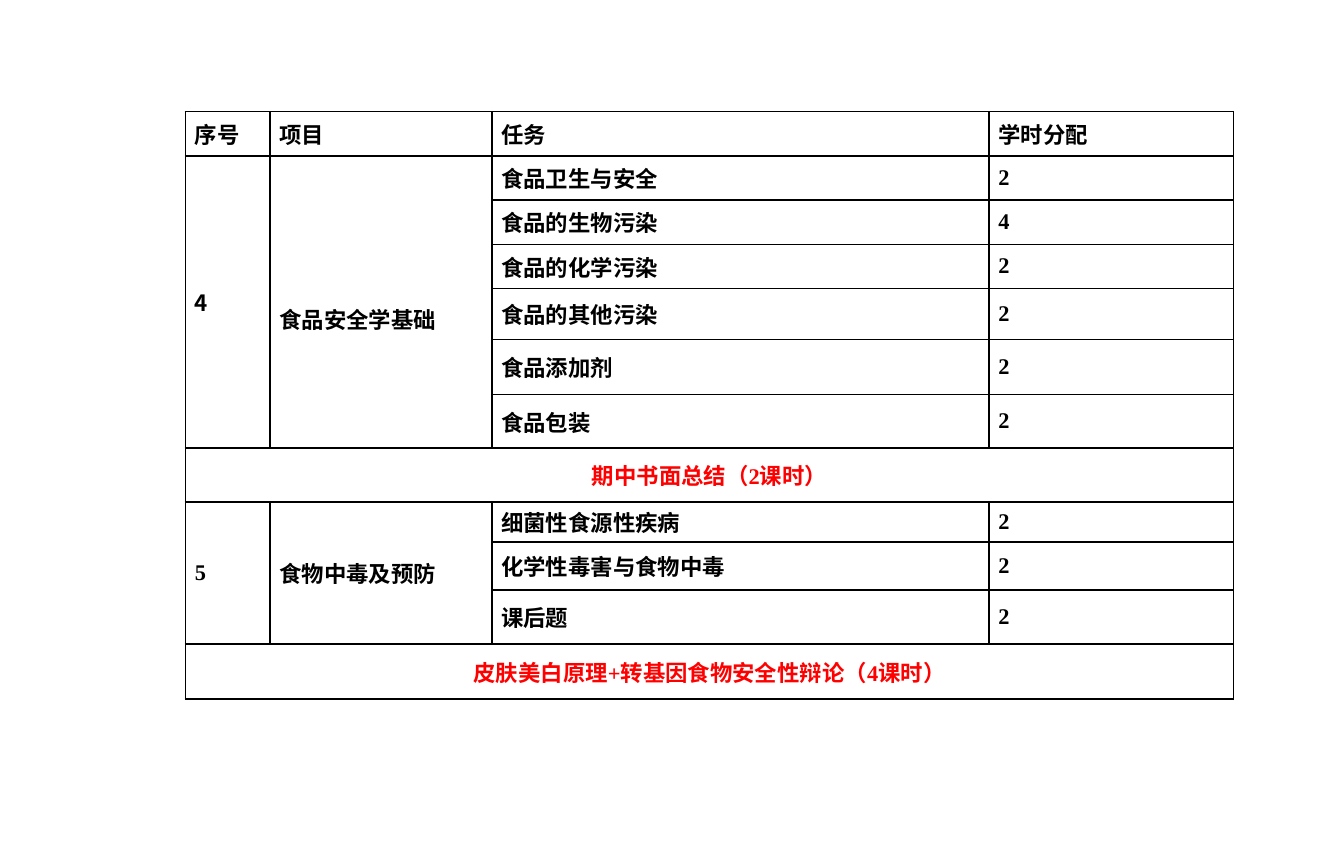
from lxml import etree
from pptx import Presentation
from pptx.dml.color import RGBColor
from pptx.enum.text import MSO_ANCHOR, PP_ALIGN
from pptx.oxml.ns import qn
from pptx.util import Inches, Pt

MIDDLE = MSO_ANCHOR.MIDDLE
CENTER, JUSTIFY = PP_ALIGN.CENTER, PP_ALIGN.JUSTIFY

BLACK, RED = "000000", "FF0000"
LATIN, CJK = "Times New Roman", "Noto Sans CJK SC"
COL_WIDTHS = [0.63, 1.65, 3.7, 1.82]
ROW_HEIGHTS = [0.33] * 4 + [0.38, 0.41, 0.4, 0.4, 0.3, 0.36, 0.4, 0.41]
HEADERS = ["序号", "项目", "任务", "学时分配"]
# number, number font, project, extra top margin, tasks with hours, closing line
UNITS = [
    ("4", CJK, "食品安全学基础", 0.25,
     [("食品卫生与安全", 2), ("食品的生物污染", 4), ("食品的化学污染", 2),
      ("食品的其他污染", 2), ("食品添加剂", 2), ("食品包装", 2)],
     "期中书面总结（2课时）"),
    ("5", LATIN, "食物中毒及预防", 0,
     [("细菌性食源性疾病", 2), ("化学性毒害与食物中毒", 2), ("课后题", 2)],
     "皮肤美白原理+转基因食物安全性辩论（4课时）"),
]


def rgb(color):
    return RGBColor.from_string(color)


def format_cell(cell):
    """Give a cell its black borders, no fill and its margins."""
    tc_pr = cell._tc.get_or_add_tcPr()
    for side in ("lnL", "lnR", "lnT", "lnB"):
        ln = etree.SubElement(tc_pr, qn(f"a:{side}"), w=str(Pt(1)))
        fill = etree.SubElement(ln, qn("a:solidFill"))
        etree.SubElement(fill, qn("a:srgbClr"), val=BLACK)
    cell.fill.background()
    cell.margin_left = cell.margin_right = Inches(0.07)
    cell.margin_top = cell.margin_bottom = 0
    cell.vertical_anchor = MIDDLE


def write(cell, text, color=BLACK, font=LATIN, align=JUSTIFY):
    p = cell.text_frame.paragraphs[0]
    p.text = text
    p.alignment = align
    r = p.runs[0]
    r.font.size = Pt(12)
    r.font.bold = True
    r.font.name = font
    r.font.color.rgb = rgb(color)
    etree.SubElement(r.font._element, qn("a:ea"), typeface=CJK)


def add_unit(table, top, unit):
    """Fill the rows of one unit from row top; return the next free row."""
    number, number_font, project, offset, tasks, closing = unit
    end = top + len(tasks)
    for col in (0, 1):
        table.cell(top, col).merge(table.cell(end - 1, col))
    write(table.cell(top, 0), number, font=number_font)
    write(table.cell(top, 1), project)
    table.cell(top, 1).margin_top = Inches(offset)
    for row, (task, hours) in enumerate(tasks, top):
        write(table.cell(row, 2), task)
        write(table.cell(row, 3), str(hours))
    table.cell(end, 0).merge(table.cell(end, len(HEADERS) - 1))
    write(table.cell(end, 0), closing, RED, align=CENTER)
    return end + 1


def add_schedule(slide, left, top, width, height):
    table = slide.shapes.add_table(
        len(ROW_HEIGHTS), len(COL_WIDTHS),
        Inches(left), Inches(top), Inches(width), Inches(height)).table
    table.first_row = table.horz_banding = False
    for column, share in zip(table.columns, COL_WIDTHS):
        column.width = Inches(width * share / sum(COL_WIDTHS))
    for row, share in zip(table.rows, ROW_HEIGHTS):
        row.height = Inches(height * share / sum(ROW_HEIGHTS))
    for cell in table.iter_cells():
        format_cell(cell)
    for col, header in enumerate(HEADERS):
        write(table.cell(0, col), header)
    row = 1
    for unit in UNITS:
        row = add_unit(table, row, unit)


def main():
    prs = Presentation()
    prs.slide_width, prs.slide_height = Inches(10), Inches(6.3)
    slide = prs.slides.add_slide(prs.slide_layouts[6])
    add_schedule(slide, 1.38, 0.83, 7.8, 4.37)
    prs.save("out.pptx")


if __name__ == "__main__":
    main()
